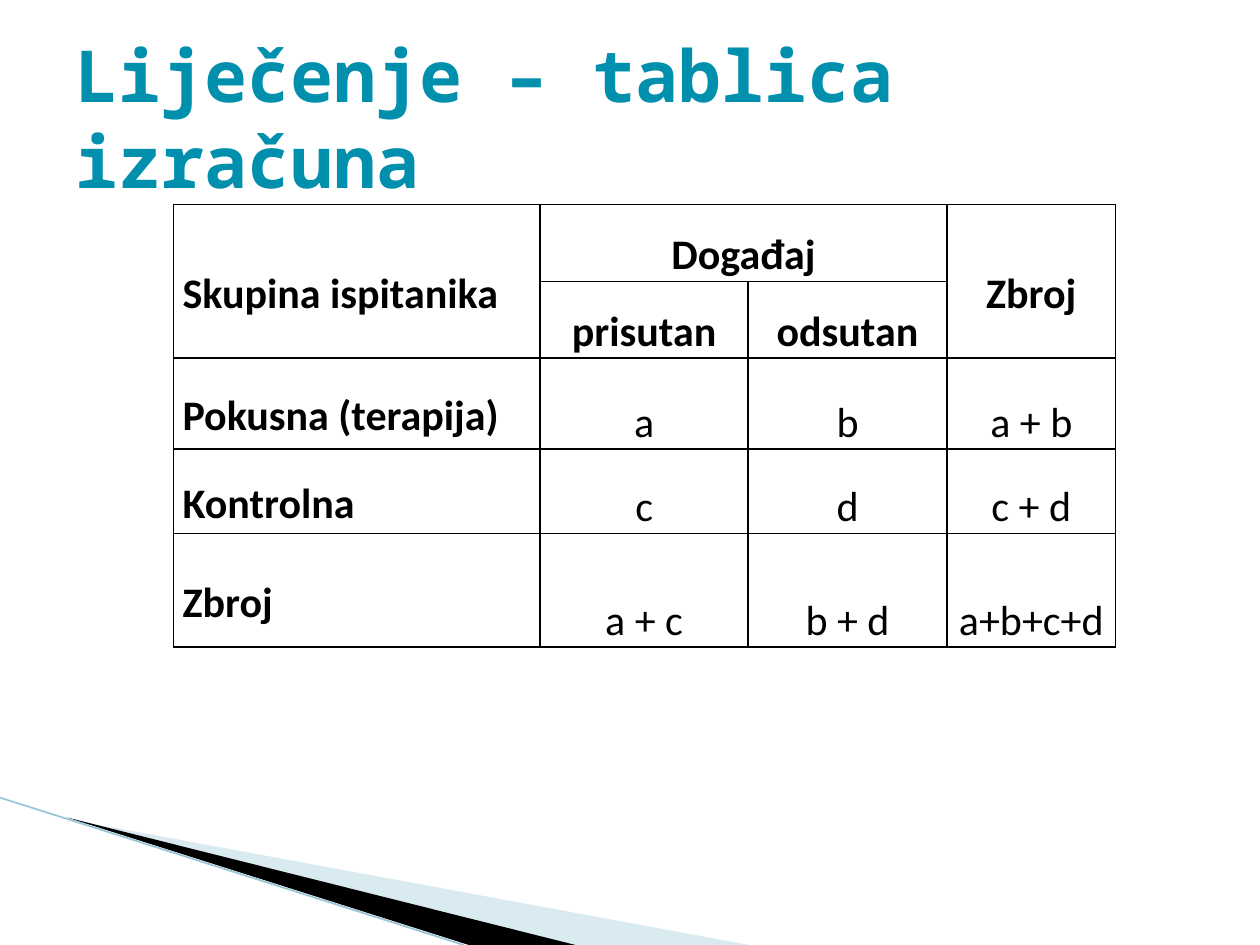
from lxml import etree
from pptx import Presentation
from pptx.dml.color import RGBColor
from pptx.enum.shapes import MSO_CONNECTOR
from pptx.enum.text import MSO_ANCHOR, MSO_AUTO_SIZE, PP_ALIGN
from pptx.oxml.ns import qn
from pptx.util import Cm, Pt

LEFT, CENTER = PP_ALIGN.LEFT, PP_ALIGN.CENTER
MIDDLE, BOTTOM = MSO_ANCHOR.MIDDLE, MSO_ANCHOR.BOTTOM
STRAIGHT = MSO_CONNECTOR.STRAIGHT
NO_AUTOFIT = MSO_AUTO_SIZE.NONE

HEADER_ROWS = 2
COLUMN_WIDTHS = (7.39, 4.19, 4.01, 3.4)
ROW_HEIGHTS = (1.55, 1.55, 1.83, 1.7, 2.29)
TABLE_ROWS = (
    ("Skupina ispitanika", "Događaj", "", "Zbroj"),
    ("", "prisutan", "odsutan", ""),
    ("Pokusna (terapija)", "a", "b", "a + b"),
    ("Kontrolna", "c", "d", "c + d"),
    ("Zbroj", "a + c", "b + d", "a+b+c+d"),
)
# First and last cell (row, column) of each merged area
MERGES = (((0, 0), (1, 0)), ((0, 1), (0, 2)), ((0, 3), (1, 3)))


def color(hex_string):
    return RGBColor.from_string(hex_string)


class SlideBuilder:
    title_font, title_size, title_color = "Noto Sans Mono", 41, "008FAC"
    table_font, table_size, table_color = "Calibri", 24, "000000"

    def __init__(self, page):
        self.page = page

    def style(self, para, font, size, hex_color, bold):
        for span in para.runs:
            span.font.name = font
            span.font.size = Pt(size)
            span.font.bold = bold
            span.font.color.rgb = color(hex_color)

    def title(self, text, left, top, width, height):
        box = self.page.shapes.title
        box.left, box.top = Cm(left), Cm(top)
        box.width, box.height = Cm(width), Cm(height)
        frame = box.text_frame
        frame.text = text
        frame.word_wrap = True
        frame.auto_size = NO_AUTOFIT
        frame.vertical_anchor = MIDDLE
        para = frame.paragraphs[0]
        para.alignment = LEFT
        para.line_spacing = 1.0
        self.style(para, self.title_font, self.title_size, self.title_color, True)

    def wedge(self, points, hex_color, opacity=100):
        start, *others = [(Cm(x), Cm(y)) for x, y in points]
        builder = self.page.shapes.build_freeform(*start)
        builder.add_line_segments(others, close=True)
        shape = builder.convert_to_shape()
        shape.shadow.inherit = False
        shape.line.fill.background()
        shape.fill.solid()
        shape.fill.fore_color.rgb = color(hex_color)
        if opacity < 100:
            tint = shape.fill._xPr.find(".//" + qn("a:srgbClr"))
            etree.SubElement(tint, qn("a:alpha"), val=str(opacity * 1000))

    def line(self, start, end, hex_color, width):
        points = [Cm(value) for value in (*start, *end)]
        connector = self.page.shapes.add_connector(STRAIGHT, *points)
        connector.line.color.rgb = color(hex_color)
        connector.line.width = Pt(width)
        etree.SubElement(connector._element.spPr, qn("a:effectLst"))

    def borders(self, cell, hex_color, width):
        properties = cell._tc.get_or_add_tcPr()
        for side in ("lnL", "lnR", "lnT", "lnB"):
            edge = etree.SubElement(properties, qn("a:" + side), w=str(Pt(width)))
            fill = etree.SubElement(edge, qn("a:solidFill"))
            etree.SubElement(fill, qn("a:srgbClr"), val=hex_color)

    def cell(self, cell, text, is_label, is_header):
        self.borders(cell, self.table_color, 1)
        cell.fill.background()
        cell.margin_left = cell.margin_right = Cm(0.18)
        cell.margin_top = cell.margin_bottom = 0
        bold = is_label or is_header
        cell.vertical_anchor = MIDDLE if bold else BOTTOM
        if text:
            para = cell.text_frame.paragraphs[0]
            para.text = text
            para.alignment = LEFT if is_label else CENTER
            para.line_spacing = 1.5
            self.style(para, self.table_font, self.table_size, self.table_color, bold)

    def table(self, left, top):
        table = self.page.shapes.add_table(
            len(ROW_HEIGHTS), len(COLUMN_WIDTHS), Cm(left), Cm(top),
            Cm(sum(COLUMN_WIDTHS)), Cm(sum(ROW_HEIGHTS))).table
        table.first_row = table.horz_banding = False
        for column, width in zip(table.columns, COLUMN_WIDTHS):
            column.width = Cm(width)
        for row, height in zip(table.rows, ROW_HEIGHTS):
            row.height = Cm(height)
        for first, last in MERGES:
            table.cell(*first).merge(table.cell(*last))
        for r, texts in enumerate(TABLE_ROWS):
            for c, text in enumerate(texts):
                self.cell(table.cell(r, c), text, c == 0, r < HEADER_ROWS)


def main():
    deck = Presentation()
    deck.slide_width, deck.slide_height = Cm(25.4), Cm(19.05)
    slide = SlideBuilder(deck.slides.add_slide(deck.slide_layouts[5]))

    # Corner decoration
    slide.wedge([(1.4, 16.52), (15.1, 19.05), (11.58, 19.05)], "A0CBDC", opacity=40)
    slide.wedge([(1.35, 16.48), (11.6, 19.05), (9.45, 19.05)], "000000")
    slide.line((0, 16.08), (9.35, 19.05), "97C5D8", 0.95)

    # Title and calculation table
    slide.title("Liječenje – tablica izračuna", 1.27, 0.76, 22.86, 3.18)
    slide.table(3.5, 4.12)

    deck.save("out.pptx")


if __name__ == "__main__":
    main()
